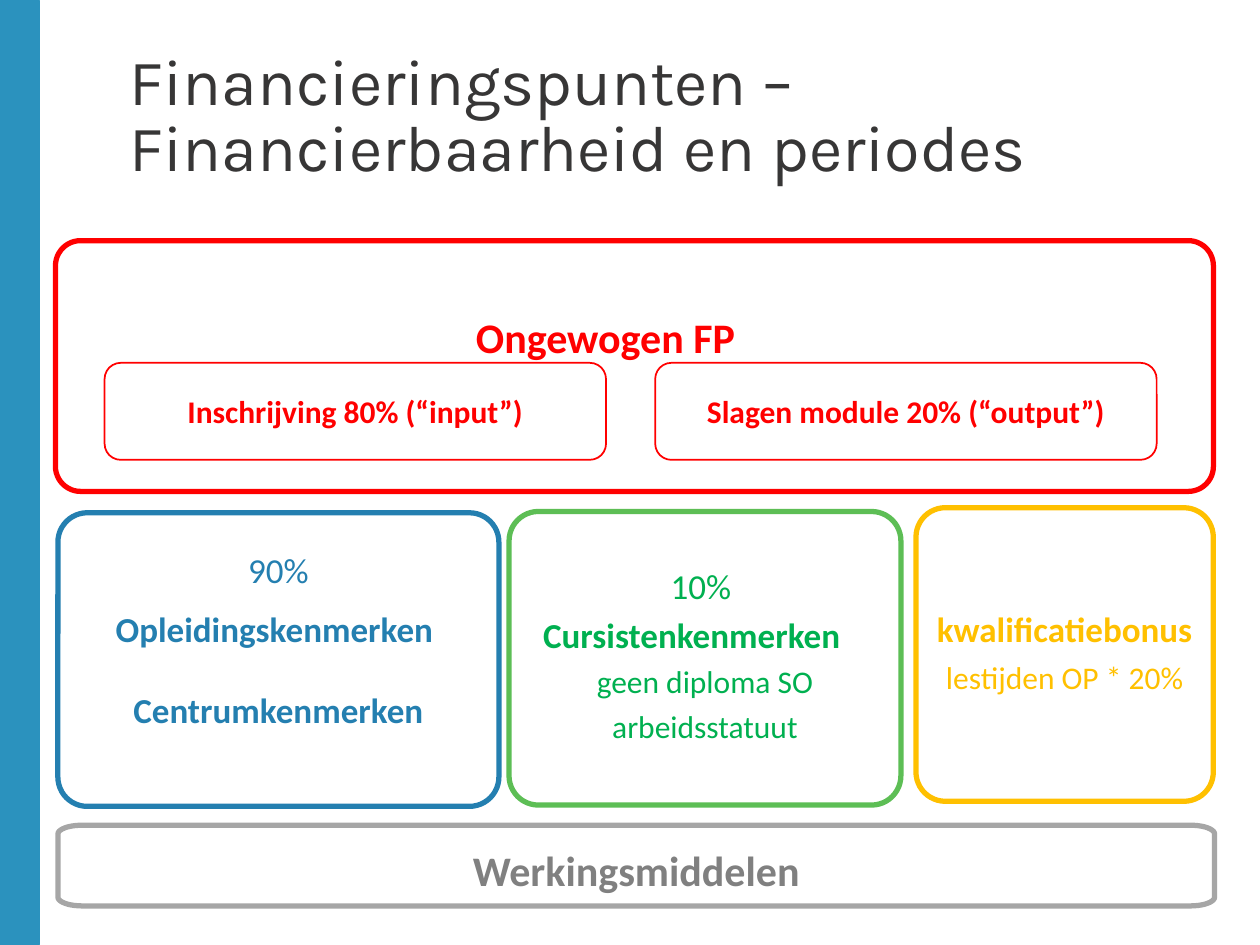
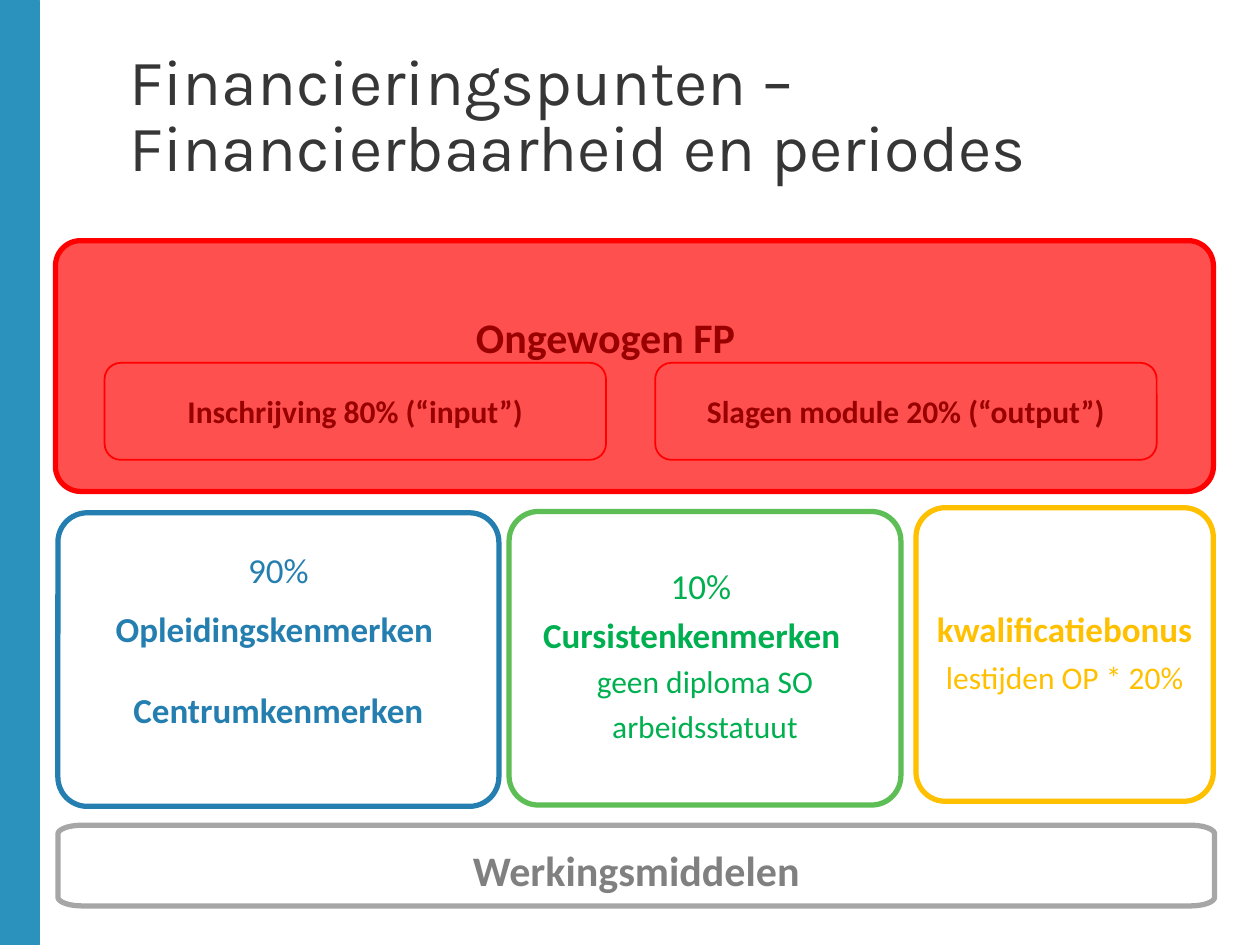
from math import cos, pi, sin

from pptx import Presentation
from pptx.dml.color import RGBColor
from pptx.enum.shapes import MSO_SHAPE
from pptx.enum.text import MSO_ANCHOR, PP_ALIGN
from pptx.util import Inches, Pt

COLORS = {
    "band": "2B92BE", "title": "373636", "white": "FFFFFF",
    "red": "FF0000", "light_red": "FF5050", "dark_red": "990000",
    "blue": "247FB0", "green_line": "5DBE55", "green": "00B050",
    "yellow": "FFC000", "grey_line": "A6A6A6", "grey": "808080",
}
TITLE = "Financieringspunten – Financierbaarheid en periodes"
TITLE_FONT, BODY_FONT = "Karla", "Calibri"
BOX_PAD = 0.15
CORNER = 0.1         # corner radius as a share of the box height
CORNER_INSET = 0.29  # share of the radius by which a rounded box insets its text


def rgb(name):
    return RGBColor.from_string(COLORS[name])


def write(p, text, size=20, color="title", bold=False, font=BODY_FONT,
          align=PP_ALIGN.CENTER, before=0, indent=0):
    p.alignment = align
    p.space_before = Pt(before)
    if indent:
        p._p.get_or_add_pPr().set("marL", str(Inches(indent)))
    r = p.add_run()
    r.text = text
    r.font.name, r.font.size, r.font.bold = font, Pt(size), bold
    r.font.color.rgb = rgb(color)


def set_frame(tf, left=0, top=0, right=0, bottom=0, anchor=MSO_ANCHOR.TOP):
    tf.word_wrap = True
    tf.vertical_anchor = anchor
    tf.margin_left, tf.margin_top = Inches(left), Inches(top)
    tf.margin_right, tf.margin_bottom = Inches(right), Inches(bottom)


class Deck:
    def __init__(self):
        self.prs = Presentation()
        self.prs.slide_width, self.prs.slide_height = Inches(10), Inches(7.5)

    def new_slide(self, title):
        self.s = self.prs.slides.add_slide(self.prs.slide_layouts[5])
        band = self.s.shapes.add_shape(MSO_SHAPE.RECTANGLE, 0, 0, Inches(0.31), Inches(7.5))
        self.style(band, "band", "band", 0.5)
        sp = self.s.shapes.title
        sp.left, sp.top, sp.width, sp.height = map(Inches, (1.03, 0.41, 8.52, 1.22))
        set_frame(sp.text_frame)
        p = sp.text_frame.paragraphs[0]
        p.line_spacing = Pt(38)
        write(p, title, 37, font=TITLE_FONT, align=PP_ALIGN.LEFT)

    def style(self, sp, fill, line, width):
        sp.shadow.inherit = False
        sp.fill.solid()
        sp.fill.fore_color.rgb = rgb(fill)
        sp.line.color.rgb = rgb(line)
        sp.line.width = Pt(width)

    def fill_text(self, sp, lines, color):
        tf = sp.text_frame
        for i, (text, fmt) in enumerate(lines):
            p = tf.add_paragraph() if i else tf.paragraphs[0]
            write(p, text, color=color, **fmt)

    def box(self, x, y, w, h, lines, line, color, text_top, fill="white", shift=0):
        """Rounded box; text starts text_top below its top, moved left by shift."""
        sp = self.s.shapes.add_shape(MSO_SHAPE.ROUNDED_RECTANGLE, *map(Inches, (x, y, w, h)))
        sp.adjustments[0] = CORNER
        self.style(sp, fill, line, 3)
        inset = CORNER_INSET * CORNER * h
        side = BOX_PAD - inset
        set_frame(sp.text_frame, side, text_top - inset, side + 2 * shift)
        self.fill_text(sp, lines, color)

    def inner_box(self, x, text, fill, color):
        """Thin rounded box inside the top box."""
        sp = self.s.shapes.add_shape(MSO_SHAPE.ROUNDED_RECTANGLE,
                                     *map(Inches, (x, 2.88, 3.98, 0.77)))
        self.style(sp, fill, "red", 1)
        set_frame(sp.text_frame, 0.1, 0.05, 0.1, 0.05, MSO_ANCHOR.MIDDLE)
        self.fill_text(sp, [(text, dict(size=18, bold=True))], color)

    def bar(self, x, y, w, h, rx, ry, lines, line, color, text_top):
        """Bar with elliptical corners of radii rx and ry."""
        centres = [(x + w - rx, y + h - ry), (x + rx, y + h - ry),
                   (x + rx, y + ry), (x + w - rx, y + ry)]
        steps = 10
        points = []
        for quarter, (cx, cy) in enumerate(centres):
            for i in range(steps + 1):
                angle = (quarter + i / steps) * pi / 2
                points.append((Inches(cx + rx * cos(angle)), Inches(cy + ry * sin(angle))))
        builder = self.s.shapes.build_freeform(*points[0])
        builder.add_line_segments(points[1:], close=True)
        sp = builder.convert_to_shape()
        self.style(sp, "white", line, 3)
        set_frame(sp.text_frame, BOX_PAD, text_top, BOX_PAD)
        self.fill_text(sp, lines, color)


def funding_slide(deck, fill, color):
    """The funding scheme, with the given fill and text colour in its top box."""
    deck.new_slide(TITLE)
    deck.box(0.44, 1.91, 9.19, 1.99, [("Ongewogen FP", dict(size=24, bold=True))],
             "red", color, 0.56, fill, shift=0.23)
    deck.box(0.46, 4.07, 3.5, 2.33, [
        ("90%", {}),
        ("Opleidingskenmerken ", dict(bold=True, before=10)),
        ("Centrumkenmerken", dict(bold=True, before=22)),
    ], "blue", "blue", 0.28)
    deck.box(4.04, 4.06, 3.11, 2.33, [
        ("10% ", {}),
        ("Cursistenkenmerken", dict(bold=True, before=4, align=PP_ALIGN.LEFT, indent=0.12)),
        ("geen diploma SO", dict(size=18, before=4)),
        ("arbeidsstatuut", dict(size=18, before=4)),
    ], "green_line", "green", 0.42)
    deck.box(7.27, 4.03, 2.36, 2.33, [
        ("kwalificatiebonus", dict(bold=True)),
        ("lestijden OP * 20%", dict(size=18, before=5)),
    ], "yellow", "yellow", 0.79)
    for x, text in ((0.83, "Inschrijving 80% (“input”)"),
                    (5.2, "Slagen module 20% (“output”)")):
        deck.inner_box(x, text, fill, color)
    deck.bar(0.46, 6.55, 9.18, 0.64, 0.19, 0.07,
             [("Werkingsmiddelen", dict(size=24, bold=True))], "grey_line", "grey", 0.15)


def main():
    deck = Deck()
    funding_slide(deck, "white", "red")
    funding_slide(deck, "light_red", "dark_red")
    deck.prs.save("out.pptx")


if __name__ == "__main__":
    main()
